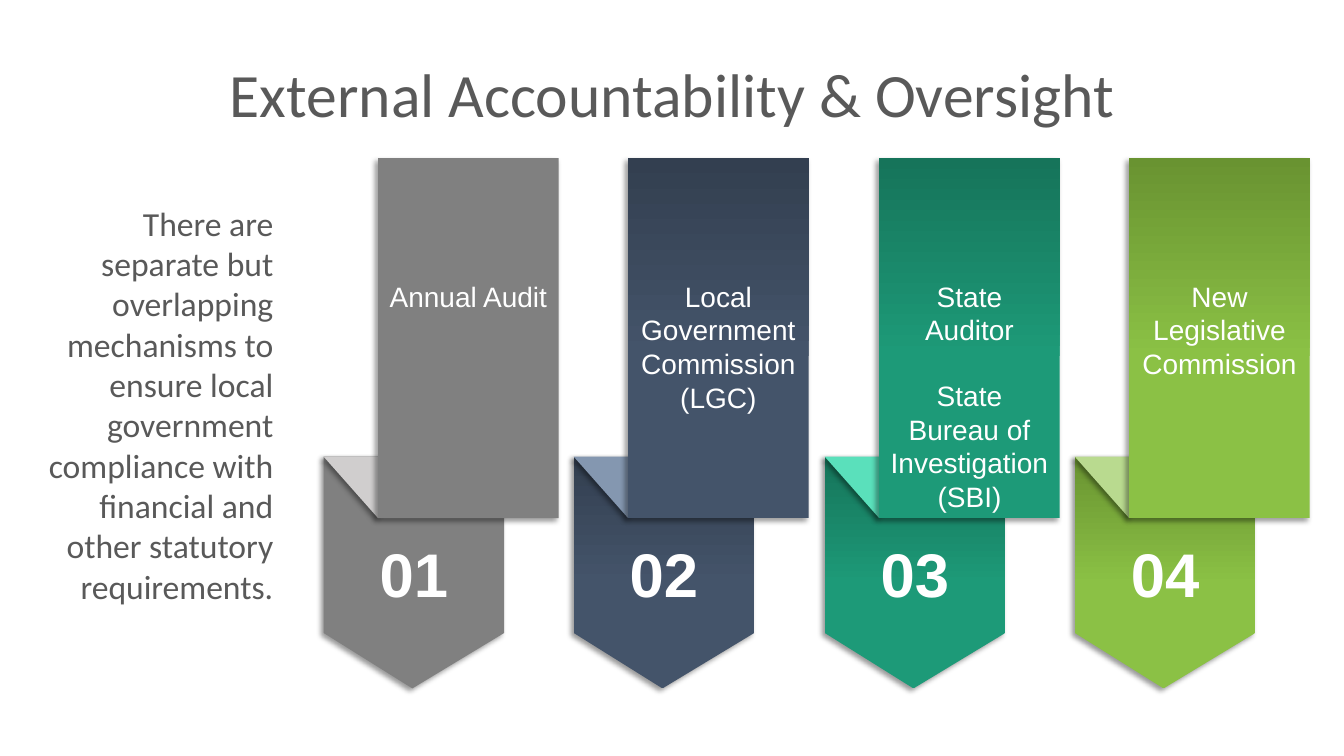
from copy import deepcopy

from lxml import etree
from pptx import Presentation
from pptx import util as u
from pptx.dml.color import RGBColor
from pptx.enum import shapes, text
from pptx.oxml import ns

PX = 9144
INK = RGBColor(0x59, 0x59, 0x59)
WHITE = RGBColor(0xFF, 0xFF, 0xFF)
GRAY = RGBColor(0x80, 0x80, 0x80)
GRAY_FOLD = RGBColor(0xD0, 0xCE, 0xCE)
NAVY = RGBColor(0x44, 0x54, 0x6A)
NAVY_DARK = RGBColor(0x33, 0x3F, 0x50)
NAVY_FOLD = RGBColor(0x84, 0x97, 0xB0)
TEAL = RGBColor(0x1D, 0x9A, 0x78)
TEAL_DARK = RGBColor(0x16, 0x74, 0x5A)
TEAL_FOLD = RGBColor(0x5A, 0xE0, 0xBB)
LIME = RGBColor(0x8B, 0xC1, 0x45)
LIME_DARK = RGBColor(0x69, 0x93, 0x31)
LIME_FOLD = RGBColor(0xB9, 0xDA, 0x8F)

RIBBONS = [
    (["Annual Audit"], 0, GRAY, None, GRAY_FOLD),
    (["Local Government Commission", "(LGC)"], 0, NAVY, NAVY_DARK, NAVY_FOLD),
    (["State Auditor", "State Bureau of Investigation (SBI)"], 23,
     TEAL, TEAL_DARK, TEAL_FOLD),
    (["New Legislative Commission"], 0, LIME, LIME_DARK, LIME_FOLD),
]


def px(*lengths):
    return [u.Emu(length * PX) for length in lengths]


def write(shape, paragraphs, size, font="Arial", color=WHITE, bold=False,
          align=text.PP_ALIGN.CENTER, anchor=text.MSO_ANCHOR.MIDDLE,
          insets=(10, 5, 10, 5), line=None, gap=0):
    frame = shape.text_frame
    frame.word_wrap = True
    frame.vertical_anchor = anchor
    (frame.margin_left, frame.margin_top,
     frame.margin_right, frame.margin_bottom) = px(*insets)
    for i, words in enumerate(paragraphs):
        paragraph = frame.paragraphs[0] if i == 0 else frame.add_paragraph()
        paragraph.alignment = align
        if line:
            paragraph.line_spacing = line
        if i and gap:
            paragraph.space_before = u.Pt(gap)
        run = paragraph.add_run()
        run.text = words
        run.font.name = font
        run.font.size = u.Pt(size)
        run.font.bold = bold
        run.font.color.rgb = color


def paint(shape, color, dark=None):
    shape.line.fill.background()
    if dark:
        shape.fill.gradient()
        shape.fill.gradient_angle = 90
        base, top = shape.fill.gradient_stops
        base.color.rgb, top.color.rgb = color, dark
        base.position, top.position = 0, 1
        stops = shape._element.spPr.find(".//" + ns.qn("a:gsLst"))
        middle = deepcopy(stops[0])
        middle.set("pos", "45000")
        stops.insert(1, middle)
    else:
        shape.fill.solid()
        shape.fill.fore_color.rgb = color
    shape.shadow.inherit = False
    effects = shape._element.spPr.find(ns.qn("a:effectLst"))
    shadow = etree.SubElement(
        effects, ns.qn("a:outerShdw"), blurRad=str(u.Pt(4)),
        dist=str(u.Pt(3)), dir="8100000", algn="tr", rotWithShape="0")
    black = etree.SubElement(shadow, ns.qn("a:srgbClr"), val="000000")
    etree.SubElement(black, ns.qn("a:alpha"), val="40000")


def outline(slide, left, top, points):
    corners = [(left + x, top + y) for x, y in points]
    builder = slide.shapes.build_freeform(*corners[0], scale=PX)
    builder.add_line_segments(corners[1:], close=True)
    return builder.convert_to_shape()


def label(slide, box, words, **style):
    write(slide.shapes.add_textbox(*px(*box)), [words],
          font="Calibri", color=INK, **style)


def ribbon(slide, box, number, lines, gap, color, dark, fold_color):
    left, top, width, height = box
    fold_width, fold_height, banner_height = 54, 61, 357
    banner_width = width - fold_width
    tail_top = banner_height - fold_height
    tail_height = height - tail_top

    tail = outline(slide, left, top + tail_top, [
        (0, tail_height - 55), (0, 0), (banner_width, 0),
        (banner_width, tail_height - 55), (88, tail_height)])
    paint(tail, color, dark)
    write(tail, [number], 44, bold=True, insets=(0, 0, 0, 0))

    fold = outline(slide, left, top + tail_top,
                   [(fold_width, fold_height), (0, 0), (94, 0)])
    paint(fold, fold_color)

    banner = slide.shapes.add_shape(
        shapes.MSO_SHAPE.RECTANGLE,
        *px(left + fold_width, top, banner_width, banner_height))
    paint(banner, color, dark)
    write(banner, lines, 20, anchor=text.MSO_ANCHOR.TOP,
          insets=(10, 120, 10, 5), gap=gap)


def ribbon_row(slide, box):
    left, top, width, height = box
    ribbon_width = 233
    pitch = (width - ribbon_width) / (len(RIBBONS) - 1)
    for i, content in enumerate(RIBBONS):
        ribbon(slide, (left + round(i * pitch), top, ribbon_width, height),
               f"{i + 1:02}", *content)


def main():
    deck = Presentation()
    deck.slide_width, deck.slide_height = px(1333, 750)
    slide = deck.slides.add_slide(deck.slide_layouts[6])
    label(slide, (92, 24, 1150, 145), "External Accountability & Oversight",
          size=44, line=0.9)
    ribbon_row(slide, (321, 157, 978, 526))
    label(slide, (35, 138, 246, 526),
          "There are separate but overlapping mechanisms to ensure local "
          "government compliance with financial and other statutory "
          "requirements.", size=24, align=text.PP_ALIGN.RIGHT)
    deck.save("out.pptx")


if __name__ == "__main__":
    main()
